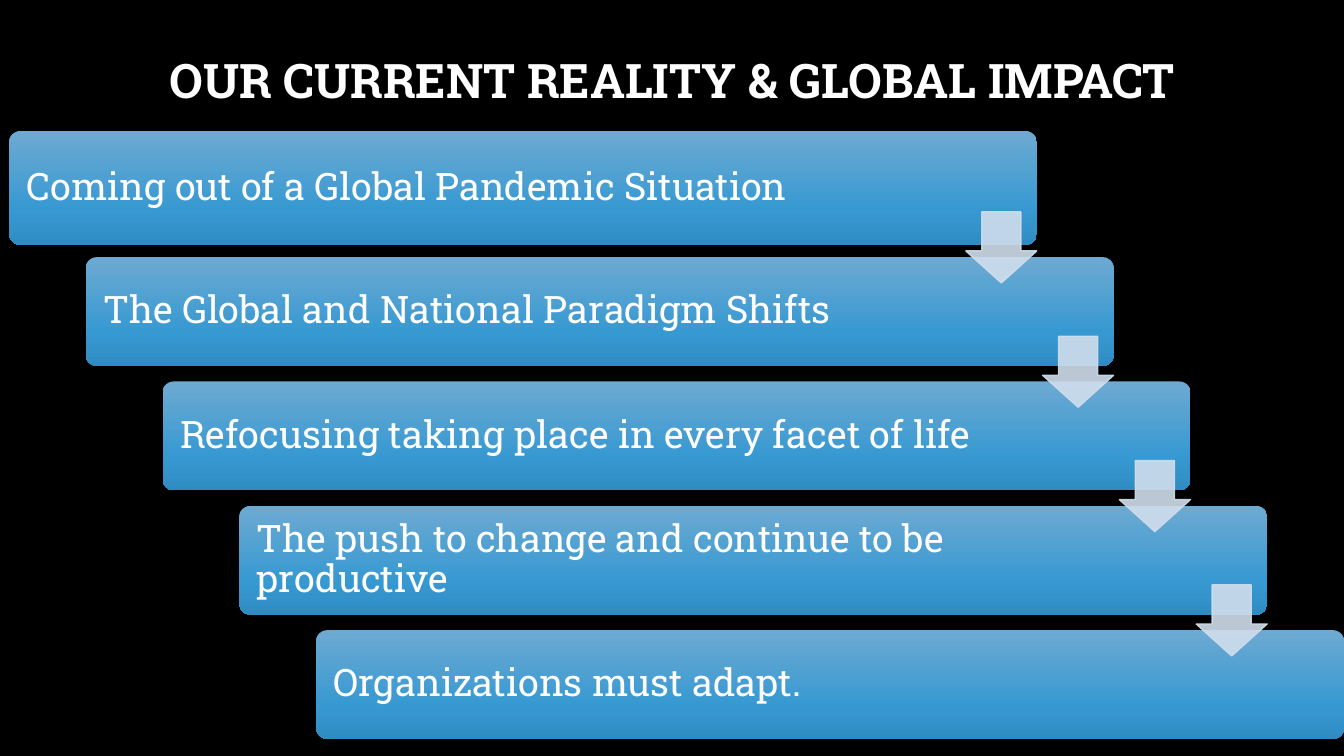
import copy

import pptx
import pptx.dml.color
import pptx.enum.shapes
import pptx.enum.text
import pptx.oxml.ns
import pptx.util
from lxml import etree
from pptx.util import Cm

RGBColor = pptx.dml.color.RGBColor
SHAPE = pptx.enum.shapes.MSO_SHAPE
ANCHOR = pptx.enum.text.MSO_ANCHOR
ALIGN = pptx.enum.text.PP_ALIGN
qn = pptx.oxml.ns.qn

BLACK = RGBColor(0x00, 0x00, 0x00)
WHITE = RGBColor(0xFF, 0xFF, 0xFF)
PALE_BLUE = RGBColor(0xD0, 0xDE, 0xEC)
BAR_STOPS = [
    (0, RGBColor(0x6D, 0xAA, 0xD2)),
    (0.69, RGBColor(0x37, 0x99, 0xD2)),
    (1, RGBColor(0x2F, 0x8C, 0xC2)),
]
FONT = "Roboto Slab"

TITLE = "OUR CURRENT REALITY & GLOBAL IMPACT"
STEPS = [
    "Coming out of a Global Pandemic Situation",
    "The Global and National Paradigm Shifts",
    "Refocusing taking place in every facet of life",
    "The push to change and continue to be productive",
    "Organizations must adapt.",
]
BAR_WIDTH, BAR_HEIGHT, FIRST_BAR_HEIGHT = Cm(25.9), Cm(2.74), Cm(2.87)
FIRST_PITCH = Cm(3.18)
ARROW_SIZE, ARROW_RISE = Cm(1.79), Cm(1.14)


def write_text(tf, text, size, align, bold=False):
    tf.word_wrap = True
    tf.vertical_anchor = ANCHOR.MIDDLE
    p = tf.paragraphs[0]
    p.text = text
    p.alignment = align
    p.line_spacing = 0.9
    font = p.runs[0].font
    font.name, font.size, font.bold = FONT, pptx.util.Pt(size), bold
    font.color.rgb = WHITE


def add_title(slide, left, top, width, height):
    sp = slide.shapes.title
    sp.left, sp.top, sp.width, sp.height = left, top, width, height
    write_text(sp.text_frame, TITLE, 34, ALIGN.CENTER, bold=True)


def fill_gradient(sp, stops):
    """Fill sp from top to bottom through three colour stops."""
    sp.fill.gradient()
    sp.fill.gradient_angle = 270
    gs_list = sp._element.spPr.find(".//" + qn("a:gsLst"))
    gs_list.append(copy.deepcopy(gs_list[-1]))
    for stop, (position, color) in zip(sp.fill.gradient_stops, stops):
        stop.position = position
        stop.color.rgb = color


def add_bar(slide, text, left, top, width, height):
    sp = slide.shapes.add_shape(SHAPE.ROUNDED_RECTANGLE, left, top, width, height)
    sp.adjustments[0] = 0.1
    sp.shadow.inherit = False
    sp.line.fill.background()
    fill_gradient(sp, BAR_STOPS)
    tf = sp.text_frame
    tf.margin_left = tf.margin_top = tf.margin_bottom = Cm(0.36)
    tf.margin_right = Cm(4.1)
    write_text(tf, text, 27, ALIGN.LEFT)


def add_arrow(slide, left, top, size):
    sp = slide.shapes.add_shape(SHAPE.DOWN_ARROW, left, top, size, size)
    sp.adjustments[0], sp.adjustments[1] = 0.55, 0.45
    sp.shadow.inherit = False
    sp.fill.solid()
    sp.fill.fore_color.rgb = PALE_BLUE
    sp.line.color.rgb = PALE_BLUE
    sp.line.width = pptx.util.Pt(1)
    for color in sp._element.spPr.iter(qn("a:srgbClr")):
        etree.SubElement(color, qn("a:alpha")).set("val", "90000")


def add_staircase(slide, left, top, width, height):
    """Step the bars from the top left to the bottom right of the box."""
    last = len(STEPS) - 1
    shift = (width - BAR_WIDTH) / last
    pitch = (height - FIRST_PITCH - BAR_HEIGHT) / (last - 1)
    lefts = [int(left + i * shift) for i in range(len(STEPS))]
    tops = [top] + [int(top + FIRST_PITCH + i * pitch) for i in range(last)]
    heights = [FIRST_BAR_HEIGHT] + [BAR_HEIGHT] * last
    for text, x, y, h in zip(STEPS, lefts, tops, heights):
        add_bar(slide, text, x, y, BAR_WIDTH, h)
    for x, next_top in zip(lefts, tops[1:]):
        add_arrow(slide, x + BAR_WIDTH - ARROW_SIZE, next_top - ARROW_RISE, ARROW_SIZE)


def main():
    prs = pptx.Presentation()
    prs.slide_width, prs.slide_height = Cm(33.87), Cm(19.05)
    slide = prs.slides.add_slide(prs.slide_layouts[5])
    slide.background.fill.solid()
    slide.background.fill.fore_color.rgb = BLACK
    add_title(slide, Cm(2.57), Cm(0.25), Cm(28.75), Cm(3.68))
    add_staircase(slide, Cm(0.23), Cm(3.3), Cm(33.64), Cm(15.32))
    prs.save("out.pptx")


if __name__ == "__main__":
    main()
